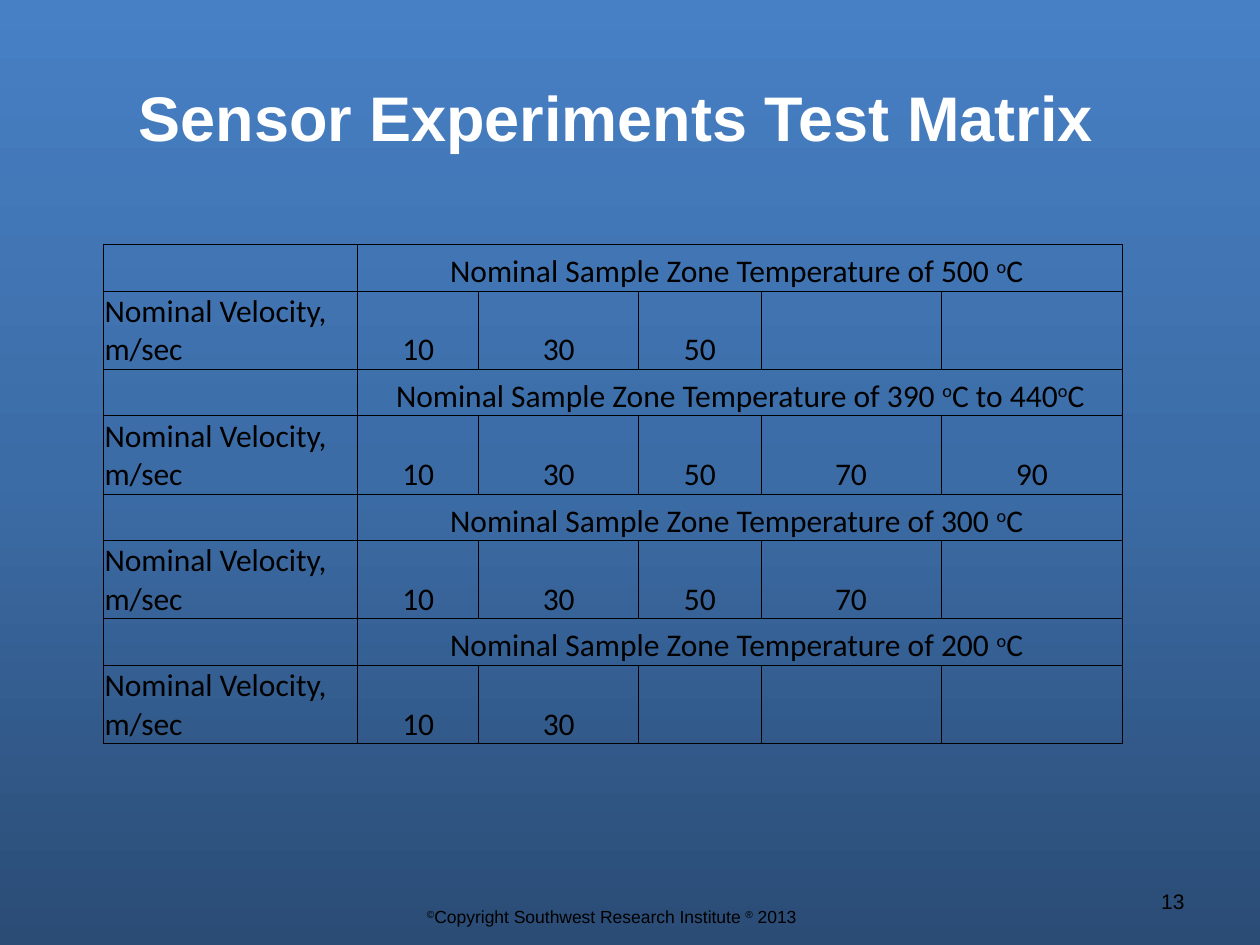
from copy import deepcopy
from dataclasses import dataclass

from lxml.etree import SubElement
from pptx import Presentation
from pptx.dml.color import RGBColor
from pptx.enum.text import MSO_ANCHOR, PP_ALIGN
from pptx.oxml.ns import qn
from pptx.util import Inches, Pt


@dataclass(frozen=True)
class Theme:
    ink: str = "000000"
    title_ink: str = "FFFFFF"
    gradient: tuple = ((0, "2A4C75"), (0.5, "3C6CA6"), (1, "4780C5"))
    sans: str = "Arial"
    table_font: str = "Calibri"
    title_size: int = 36
    table_size: int = 18
    number_size: int = 12
    copyright_size: int = 10
    border_width: float = 0.5


@dataclass(frozen=True)
class TestSeries:
    temperature: str  # text between ^ marks is superscript
    velocities: tuple


THEME = Theme()
ZONE = "Nominal Sample Zone Temperature of "
SERIES = (
    TestSeries("500 ^o^C ", (10, 30, 50)),
    TestSeries("390 ^o^C to 440^o^C", (10, 30, 50, 70, 90)),
    TestSeries("300 ^o^C ", (10, 30, 50, 70)),
    TestSeries("200 ^o^C ", (10, 30)),
)
COLUMN_WIDTHS = (2.02, 0.96, 1.27, 0.97, 1.43, 1.44)
HEADING_HEIGHT, VELOCITY_HEIGHT = 0.37, 0.33


def write_text(frame, text: str, *, size: float, font: str = THEME.sans,
               color: str = THEME.ink, bold: bool = False,
               align=PP_ALIGN.LEFT) -> None:
    """Write one paragraph; pieces between ^ marks become superscript."""
    paragraph = frame.paragraphs[0]
    paragraph.alignment = align
    for index, piece in enumerate(text.split("^")):
        if not piece:
            continue
        run = paragraph.add_run()
        run.text = piece
        run.font.name, run.font.size, run.font.bold = font, Pt(size), bold
        run.font.color.rgb = RGBColor.from_string(color)
        if index % 2:
            run._r.get_or_add_rPr().set("baseline", "30000")


def add_label(slide, box: tuple, text: str, *, anchor=MSO_ANCHOR.TOP,
              side_inset: float = 0.1, **text_format) -> None:
    frame = slide.shapes.add_textbox(*map(Inches, box)).text_frame
    frame.word_wrap = True
    frame.vertical_anchor = anchor
    frame.margin_left = frame.margin_right = Inches(side_inset)
    write_text(frame, text, **text_format)


def paint_background(slide) -> None:
    fill = slide.background.fill
    fill.gradient()
    fill.gradient_angle = 90
    first_stop = slide.element.find(".//" + qn("a:gs"))
    first_stop.addnext(deepcopy(first_stop))
    for stop, (position, color) in zip(fill.gradient_stops, THEME.gradient):
        stop.position = position
        stop.color.rgb = RGBColor.from_string(color)


def format_cell(cell) -> None:
    cell.margin_left = cell.margin_right = cell.margin_top = Inches(0.01)
    cell.margin_bottom = 0
    cell.vertical_anchor = MSO_ANCHOR.BOTTOM
    properties = cell._tc.get_or_add_tcPr()
    for side in ("a:lnL", "a:lnR", "a:lnT", "a:lnB"):
        border = SubElement(properties, qn(side), w=str(Pt(THEME.border_width)))
        solid = SubElement(border, qn("a:solidFill"))
        SubElement(solid, qn("a:srgbClr"), val=THEME.ink)
    cell.fill.background()


def write_cell(cell, text: str, align=PP_ALIGN.CENTER) -> None:
    write_text(cell.text_frame, text, size=THEME.table_size,
               font=THEME.table_font, align=align)


def add_test_matrix(slide) -> None:
    frame = slide.shapes.add_table(
        2 * len(SERIES), len(COLUMN_WIDTHS),
        Inches(0.82), Inches(1.94), Inches(8.1), Inches(3.94))
    matrix = frame.table
    matrix.first_row = matrix.horz_banding = False
    for column, width in zip(matrix.columns, COLUMN_WIDTHS):
        column.width = Inches(width)
    for index, row in enumerate(matrix.rows):
        row.height = Inches(VELOCITY_HEIGHT if index % 2 else HEADING_HEIGHT)
    for cell in matrix.iter_cells():
        format_cell(cell)

    # Each series has a temperature row and a velocity row
    for index, series in enumerate(SERIES):
        top = 2 * index
        heading = matrix.cell(top, 1)
        heading.merge(matrix.cell(top, len(COLUMN_WIDTHS) - 1))
        write_cell(heading, ZONE + series.temperature)
        write_cell(matrix.cell(top + 1, 0), "Nominal Velocity, m/sec", PP_ALIGN.LEFT)
        for column, velocity in enumerate(series.velocities, start=1):
            write_cell(matrix.cell(top + 1, column), str(velocity))
    frame.height = Inches(3.94)


def main() -> None:
    presentation = Presentation()
    presentation.slide_width, presentation.slide_height = Inches(10), Inches(7.5)
    slide = presentation.slides.add_slide(presentation.slide_layouts[5])
    paint_background(slide)

    # Title
    title = slide.shapes.title
    title.left, title.top = Inches(1), Inches(0.3)
    title.width, title.height = Inches(7.92), Inches(1.25)
    title.text_frame.vertical_anchor = MSO_ANCHOR.MIDDLE
    write_text(title.text_frame, "Sensor Experiments Test Matrix",
               size=THEME.title_size, color=THEME.title_ink, bold=True)

    add_test_matrix(slide)

    # Copyright line and slide number
    add_label(slide, (3.27, 7.14, 3.17, 0.21),
              "^©^Copyright Southwest Research Institute ^®^ 2013",
              side_inset=0, size=THEME.copyright_size, align=PP_ALIGN.CENTER)
    add_label(slide, (7.17, 6.95, 2.33, 0.4), "13", anchor=MSO_ANCHOR.MIDDLE,
              size=THEME.number_size, align=PP_ALIGN.RIGHT)

    presentation.save("out.pptx")


if __name__ == "__main__":
    main()
